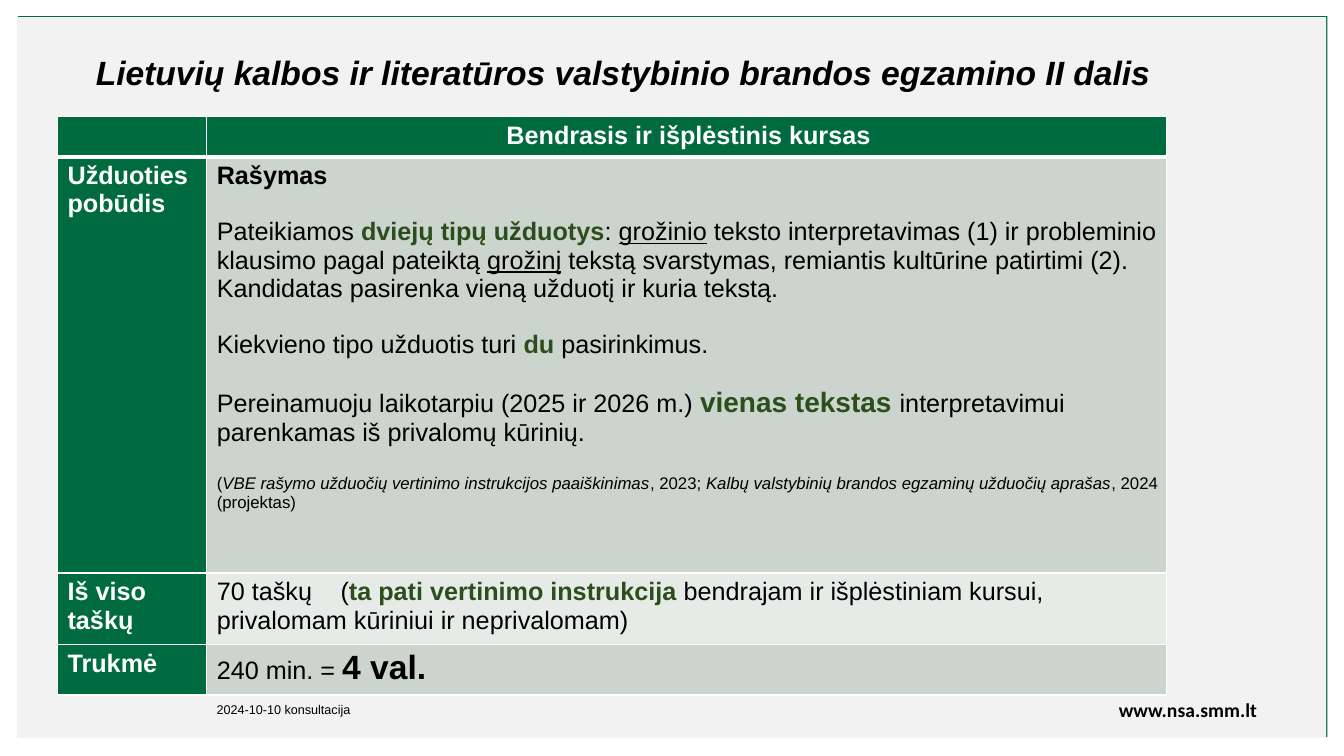
from dataclasses import dataclass

from lxml.etree import SubElement
from pptx import Presentation
from pptx.dml.color import RGBColor
from pptx.enum.shapes import MSO_SHAPE
from pptx.enum.text import MSO_ANCHOR, PP_ALIGN
from pptx.oxml.ns import qn
from pptx.util import Cm, Pt


@dataclass(frozen=True)
class Theme:
    font: str = "Arial"
    site_font: str = "Calibri"
    green: str = "006B3E"
    accent: str = "2C4E1C"
    panel: str = "F2F2F2"
    dark_band: str = "CCD4CE"
    light_band: str = "E7EBE8"
    black: str = "000000"
    white: str = "FFFFFF"
    title: float = 24
    body: float = 18
    large: float = 20
    site: float = 14
    note: float = 12
    date: float = 9
    gap: float = 20


THEME = Theme()


@dataclass(frozen=True)
class Bit:
    text: str
    size: float = THEME.body
    color: str = THEME.black
    bold: bool = False
    italic: bool = False
    under: bool = False
    font: str = THEME.font


@dataclass(frozen=True)
class Box:
    left: float
    top: float
    width: float
    height: float

    def place(self) -> tuple:
        return Cm(self.left), Cm(self.top), Cm(self.width), Cm(self.height)


@dataclass(frozen=True)
class Row:
    label: str
    height: float
    fill: str
    paras: list
    align: PP_ALIGN = PP_ALIGN.LEFT
    rule: float = 1


@dataclass(frozen=True)
class Label:
    box: Box
    bit: Bit
    align: PP_ALIGN = PP_ALIGN.LEFT


def key(text: str, size: float = THEME.body) -> Bit:
    return Bit(text, size, THEME.accent, bold=True)


def small(text: str, italic: bool = False) -> Bit:
    return Bit(text, THEME.note, italic=italic)


PANELS = [
    (Box(0.46, 0.41, 32.99, 18.16), THEME.green),
    (Box(0.43, 0.43, 32.99, 18.16), THEME.panel),
]
SITE = Label(
    Box(23.8, 17.45, 8.13, 0.86),
    Bit("www.nsa.smm.lt", THEME.site, bold=True, font=THEME.site_font),
    PP_ALIGN.RIGHT,
)
DATE = Label(Box(5.21, 17.55, 10.64, 0.64), Bit("2024-10-10 konsultacija", THEME.date))
HEAD = Box(2.16, 1.19, 28.91, 1.27)
HEAD_BIT = Bit(
    "Lietuvių kalbos ir literatūros valstybinio brandos egzamino II dalis",
    THEME.title, bold=True, italic=True,
)
GRID = Box(1.45, 2.93, 27.94, 14.57)
COLS = [3.76, 24.18]
INSET = 0.15
TAB = 3.12
ROWS = [
    Row("", 1.02, THEME.green,
        [[Bit("Bendrasis ir išplėstinis kursas", color=THEME.white, bold=True)]],
        PP_ALIGN.CENTER, 3),
    Row("Užduoties pobūdis", 10.49, THEME.dark_band, [
        [Bit("Rašymas", bold=True)],
        [Bit("Pateikiamos "), key("dviejų tipų užduotys"), Bit(": "),
         Bit("grožinio", under=True),
         Bit(" teksto interpretavimas (1) ir probleminio klausimo pagal pateiktą "),
         Bit("grožinį", under=True),
         Bit(" tekstą svarstymas, remiantis kultūrine patirtimi (2). "
             "Kandidatas pasirenka vieną užduotį ir kuria tekstą.")],
        [Bit("Kiekvieno tipo užduotis turi "), key("du "), Bit("pasirinkimus.")],
        [Bit("Pereinamuoju laikotarpiu (2025 ir 2026 m.) "),
         key("vienas tekstas ", THEME.large),
         Bit("interpretavimui parenkamas iš privalomų kūrinių.")],
        [small("("),
         small("VBE rašymo užduočių vertinimo instrukcijos paaiškinimas", True),
         small(", 2023; "),
         small("Kalbų valstybinių brandos egzaminų užduočių aprašas", True),
         small(", 2024 (projektas)")],
    ]),
    Row("Iš viso taškų", 1.8, THEME.light_band, [
        [Bit("70 taškų\t("), key("ta pati vertinimo instrukcija "),
         Bit("bendrajam ir išplėstiniam kursui, privalomam kūriniui ir neprivalomam)")],
    ]),
    Row("Trukmė", 1.26, THEME.dark_band,
        [[Bit("240 min. = "), Bit("4 val.", THEME.title, bold=True)]]),
]


def style(run, bit: Bit) -> None:
    font = run.font
    font.name, font.size = bit.font, Pt(bit.size)
    font.bold, font.italic, font.underline = bit.bold, bit.italic, bit.under
    font.color.rgb = RGBColor.from_string(bit.color)


def write(frame, paras: list, align: PP_ALIGN) -> None:
    for index, bits in enumerate(paras):
        para = frame.add_paragraph() if index else frame.paragraphs[0]
        para.alignment = align
        if index:
            para.space_before = Pt(THEME.gap)
        if any("\t" in bit.text for bit in bits):
            tabs = SubElement(para._p.get_or_add_pPr(), qn("a:tabLst"))
            SubElement(tabs, qn("a:tab"), pos=str(Cm(TAB)), algn="l")
        for bit in bits:
            run = para.add_run()
            run.text = bit.text
            style(run, bit)


def paint(cell, color: str, top: float, base: float) -> None:
    props = cell._tc.get_or_add_tcPr()
    for side, width in (("L", 1), ("R", 1), ("T", top), ("B", base)):
        line = SubElement(props, qn(f"a:ln{side}"), w=str(Pt(width)))
        fill = SubElement(line, qn("a:solidFill"))
        SubElement(fill, qn("a:srgbClr"), val=THEME.white)
    cell.fill.solid()
    cell.fill.fore_color.rgb = RGBColor.from_string(color)
    cell.margin_right = Cm(INSET)


def draw_panel(slide, box: Box, color: str) -> None:
    shape = slide.shapes.add_shape(MSO_SHAPE.RECTANGLE, *box.place())
    shape.shadow.inherit = False
    shape.fill.solid()
    shape.fill.fore_color.rgb = RGBColor.from_string(color)
    shape.line.fill.background()


def draw_label(slide, label: Label) -> None:
    frame = slide.shapes.add_textbox(*label.box.place()).text_frame
    frame.word_wrap = True
    write(frame, [[label.bit]], label.align)


def draw_table(slide) -> None:
    table = slide.shapes.add_table(len(ROWS), len(COLS), *GRID.place()).table
    for col, width in zip(table.columns, COLS):
        col.width = Cm(width)
    top = 1
    for index, row in enumerate(ROWS):
        table.rows[index].height = Cm(row.height)
        name, body = table.cell(index, 0), table.cell(index, 1)
        paint(name, THEME.green, top, row.rule)
        paint(body, row.fill, top, row.rule)
        if row.label:
            write(name.text_frame, [[Bit(row.label, color=THEME.white, bold=True)]],
                  PP_ALIGN.LEFT)
        write(body.text_frame, row.paras, row.align)
        top = row.rule


def draw_title(slide) -> None:
    title = slide.shapes.title
    title.left, title.top, title.width, title.height = HEAD.place()
    frame = title.text_frame
    frame.word_wrap = True
    frame.vertical_anchor = MSO_ANCHOR.TOP
    write(frame, [[HEAD_BIT]], PP_ALIGN.LEFT)
    title.element.getparent().append(title.element)


def main() -> None:
    deck = Presentation()
    deck.slide_width, deck.slide_height = Cm(33.87), Cm(19.05)
    slide = deck.slides.add_slide(deck.slide_layouts[5])
    for box, color in PANELS:
        draw_panel(slide, box, color)
    draw_label(slide, SITE)
    draw_table(slide)
    draw_title(slide)
    draw_label(slide, DATE)
    deck.save("out.pptx")


if __name__ == "__main__":
    main()
